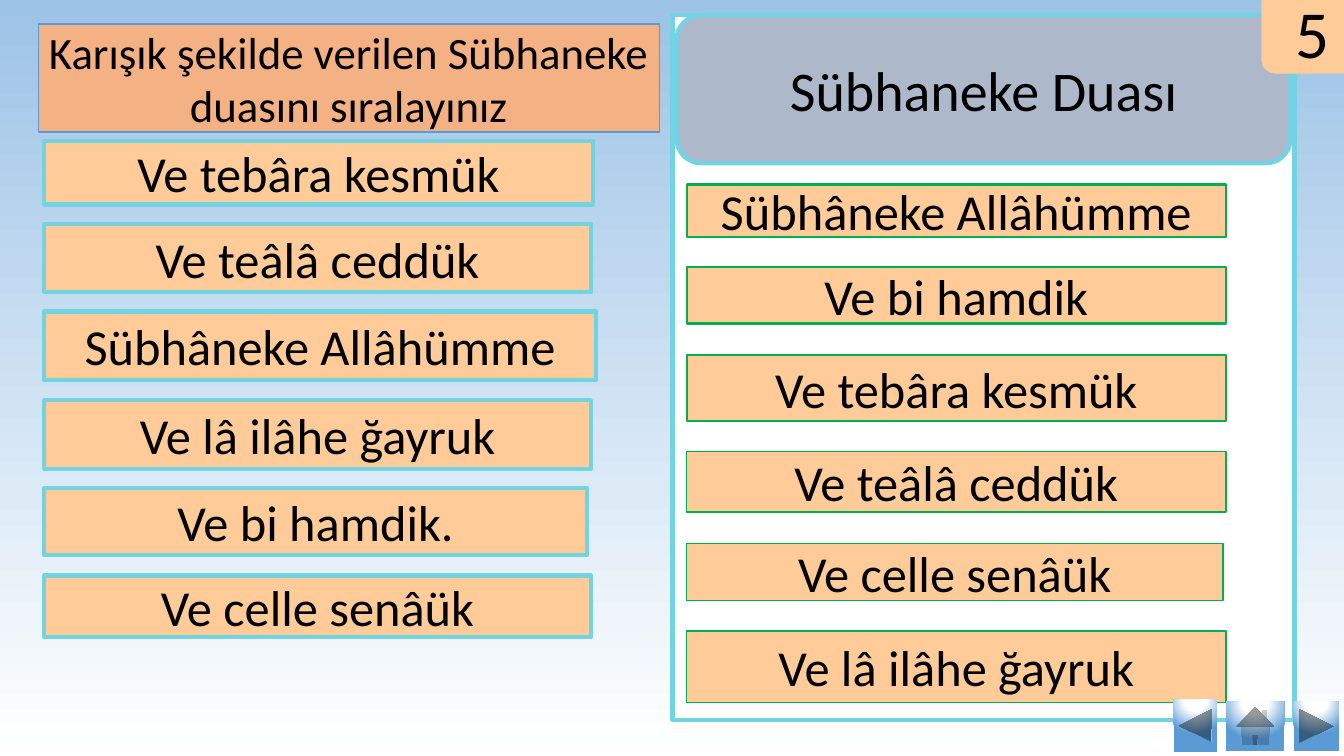
"""Build a slide for putting the lines of the Sübhaneke prayer in order."""
from dataclasses import dataclass

from lxml import etree
from pptx import Presentation
from pptx.dml.color import RGBColor
from pptx.enum import shapes, text
from pptx.oxml import ns
from pptx.util import Inches, Pt


@dataclass(frozen=True)
class Theme:
    font: str = "Calibri"
    ink: str = "000000"
    white: str = "FFFFFF"
    sky: str = "9DC3E6"
    blue: str = "5B9BD5"
    aqua: str = "72D4E3"
    green: str = "00B050"
    peach: str = "FFCC99"
    orange: str = "F4B183"
    slate: str = "ADB9CA"
    task_size: int = 32
    line_size: int = 36
    title_size: int = 40
    number_size: int = 48


theme = Theme()
kinds = shapes.MSO_SHAPE


def add_box(page, kind, place, fill=None, line=None, weight=0, words="", size=0):
    box = page.shapes.add_shape(kind, *(Inches(length) for length in place))
    box.shadow.inherit = False
    if fill:
        box.fill.solid()
        box.fill.fore_color.rgb = RGBColor.from_string(fill)
    if line:
        box.line.color.rgb = RGBColor.from_string(line)
        box.line.width = Pt(weight)
    else:
        box.line.fill.background()
    if words:
        frame = box.text_frame
        frame.word_wrap = True
        frame.vertical_anchor = text.MSO_ANCHOR.MIDDLE
        para = frame.paragraphs[0]
        para.alignment = text.PP_ALIGN.CENTER
        span = para.add_run()
        span.text = words
        span.font.name = theme.font
        span.font.size = Pt(size)
        span.font.color.rgb = RGBColor.from_string(theme.ink)
    return box


def set_glow(box):
    box.fill.gradient()
    gradient = box.element.spPr.find(ns.qn("a:gradFill"))
    for child in list(gradient):
        gradient.remove(child)
    stops = etree.SubElement(gradient, ns.qn("a:gsLst"))
    for percent, colour in ((0, theme.white), (35, theme.white), (100, theme.blue)):
        stop = etree.SubElement(stops, ns.qn("a:gs"), pos=str(percent * 1000))
        etree.SubElement(stop, ns.qn("a:srgbClr"), val=colour)
    circle = etree.SubElement(gradient, ns.qn("a:path"), path="circle")
    etree.SubElement(circle, ns.qn("a:fillToRect"), l="50000", t="-80000", r="50000", b="180000")


deck = Presentation()
deck.slide_width = Inches(13.33)
deck.slide_height = Inches(7.5)
page = deck.slides.add_slide(deck.slide_layouts[6])

backdrop = page.background.fill
backdrop.gradient()
backdrop.gradient_angle = 90
for stop, colour in zip(backdrop.gradient_stops, (theme.white, theme.sky)):
    stop.color.rgb = RGBColor.from_string(colour)

add_box(page, kinds.RECTANGLE, (6.67, 0.15, 6.17, 6.99), theme.white, theme.aqua, 3)
add_box(page, kinds.RECTANGLE, (0.38, 0.24, 6.16, 1.07), theme.orange, theme.blue, 1,
        "Karışık şekilde verilen Sübhaneke duasını sıralayınız", theme.task_size)
add_box(page, kinds.ROUNDED_RECTANGLE, (6.71, 0.15, 6.09, 1.47), theme.slate, theme.aqua, 3,
        "Sübhaneke Duası", theme.title_size)

mixed_lines = [
    ("Ve tebâra kesmük", 1.4, 5.44, 0.63),
    ("Ve teâlâ ceddük", 2.22, 5.42, 0.68),
    ("Sübhâneke Allâhümme", 3.09, 5.47, 0.68),
    ("Ve lâ ilâhe ğayruk", 3.97, 5.42, 0.68),
    ("Ve bi hamdik.", 4.84, 5.38, 0.67),
    ("Ve celle senâük", 5.71, 5.42, 0.61),
]
for words, top, width, height in mixed_lines:
    add_box(page, kinds.RECTANGLE, (0.44, top, width, height), theme.peach, theme.aqua, 3,
            words, theme.line_size)

ordered_lines = [
    ("Sübhâneke Allâhümme", 1.83, 5.35, 0.52, 1.5),
    ("Ve bi hamdik", 2.65, 5.35, 0.56, 1.5),
    ("Ve tebâra kesmük", 3.52, 5.35, 0.66, 1.5),
    ("Ve teâlâ ceddük", 4.48, 5.35, 0.6, 1),
    ("Ve celle senâük", 5.39, 5.32, 0.57, 1),
    ("Ve lâ ilâhe ğayruk", 6.26, 5.35, 0.71, 1),
]
for words, top, width, height, weight in ordered_lines:
    add_box(page, kinds.RECTANGLE, (6.81, top, width, height), theme.peach, theme.green, weight,
            words, theme.line_size)

add_box(page, kinds.ROUNDED_RECTANGLE, (12.51, -0.11, 1.01, 0.84), theme.peach,
        words="5", size=theme.number_size)

buttons = [
    (kinds.ACTION_BUTTON_BACK_OR_PREVIOUS, (11.64, 6.94, 0.43, 0.52)),
    (kinds.ACTION_BUTTON_HOME, (12.16, 6.96, 0.58, 0.49)),
    (kinds.ACTION_BUTTON_FORWARD_OR_NEXT, (12.83, 6.96, 0.45, 0.49)),
]
for kind, place in buttons:
    set_glow(add_box(page, kind, place))

deck.save("out.pptx")
